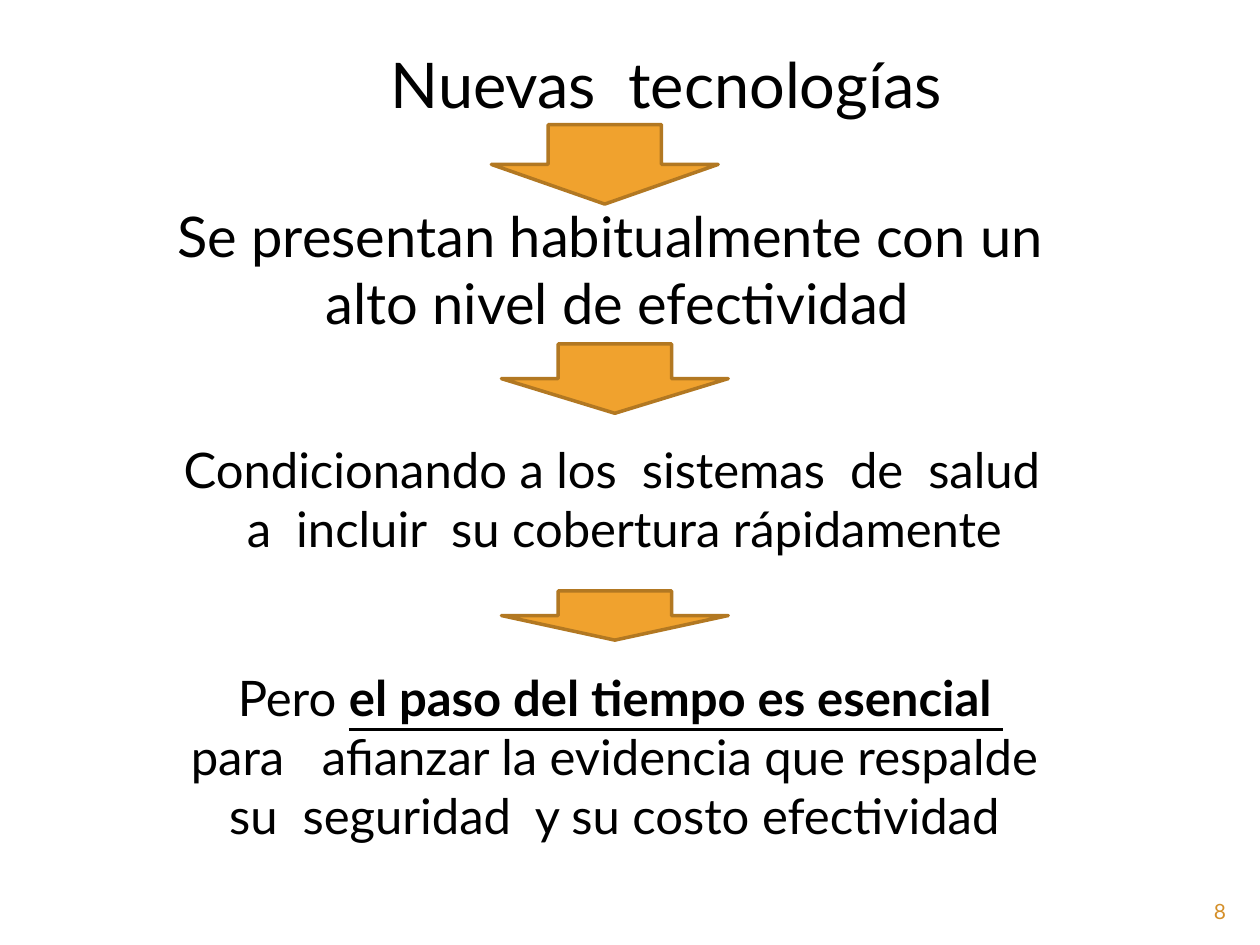
from dataclasses import dataclass

from pptx import Presentation
from pptx.dml.color import RGBColor as RGB
from pptx.enum.shapes import MSO_SHAPE as SHAPE
from pptx.enum.text import MSO_ANCHOR as ANCHOR, PP_ALIGN as ALIGN
from pptx.util import Inches, Pt


@dataclass(frozen=True)
class Theme:
    font: str = "Lato"
    text: RGB = RGB(0x00, 0x00, 0x00)
    arrow: RGB = RGB(0xF0, 0xA2, 0x2E)
    arrow_line: RGB = RGB(0xB2, 0x78, 0x22)
    number: RGB = RGB(0xD4, 0x8F, 0x29)
    title_size: int = 36
    lead_size: int = 32
    body_size: int = 28
    number_size: int = 12


THEME = Theme()

# Each statement: box, type size, paragraphs made of (text, emphasised) runs
STATEMENTS = [
    ((0.83, 1.55, 8.03, 1.18), THEME.lead_size, [
        [("Se presentan habitualmente con un", False)],
        [(" alto nivel de efectividad", False)],
    ]),
    ((0.98, 3.44, 7.95, 1.04), THEME.body_size, [
        [("Condicionando a los  sistemas  de  salud  ", False)],
        [("a  incluir  su cobertura rápidamente", False)],
    ]),
    ((0.28, 5.25, 9.29, 1.51), THEME.body_size, [
        [("Pero ", False), ("el paso del tiempo es esencial ", True)],
        [("para   afianzar la evidencia que respalde ", False)],
        [("su  seguridad  y su costo efectividad ", False)],
    ]),
]
ARROWS = [
    (3.90, 0.99, 1.80, 0.63),
    (3.98, 2.73, 1.80, 0.55),
    (3.98, 4.69, 1.80, 0.39),
]


def to_emu(box):
    return [Inches(v) for v in box]


def style_run(r, size, color=THEME.text, strong=False):
    r.font.name = THEME.font
    r.font.size = Pt(size)
    r.font.color.rgb = color
    r.font.bold = r.font.underline = strong


def add_title(slide, box, text):
    sp = slide.shapes.title
    sp.left, sp.top, sp.width, sp.height = to_emu(box)
    tf = sp.text_frame
    tf.text = text
    tf.vertical_anchor = ANCHOR.TOP
    tf.margin_left = Inches(1.77)
    p = tf.paragraphs[0]
    p.alignment = ALIGN.LEFT
    style_run(p.runs[0], THEME.title_size)


def add_text(slide, box, size, paragraphs, color=THEME.text, align=ALIGN.CENTER):
    tf = slide.shapes.add_textbox(*to_emu(box)).text_frame
    tf.word_wrap = True
    for i, runs in enumerate(paragraphs):
        p = tf.add_paragraph() if i else tf.paragraphs[0]
        p.alignment = align
        for text, strong in runs:
            r = p.add_run()
            r.text = text
            style_run(r, size, color, strong)


def add_arrow(slide, box):
    sp = slide.shapes.add_shape(SHAPE.DOWN_ARROW, *to_emu(box))
    sp.shadow.inherit = False
    sp.fill.solid()
    sp.fill.fore_color.rgb = THEME.arrow
    sp.line.color.rgb = THEME.arrow_line
    sp.line.width = Pt(2)


def main():
    prs = Presentation()
    prs.slide_width, prs.slide_height = Inches(10), Inches(7.5)
    slide = prs.slides.add_slide(prs.slide_layouts[5])

    # Title, then the chain of arrows and statements
    add_title(slide, (1.33, 0.31, 7.11, 1.31), "Nuevas  tecnologías")
    for arrow_box, (box, size, paragraphs) in zip(ARROWS, STATEMENTS):
        add_arrow(slide, arrow_box)
        add_text(slide, box, size, paragraphs)

    # Slide number
    add_text(slide, (9, 7.08, 0.83, 0.27), THEME.number_size,
             [[("8", False)]], THEME.number, ALIGN.RIGHT)

    prs.save("out.pptx")


if __name__ == "__main__":
    main()
